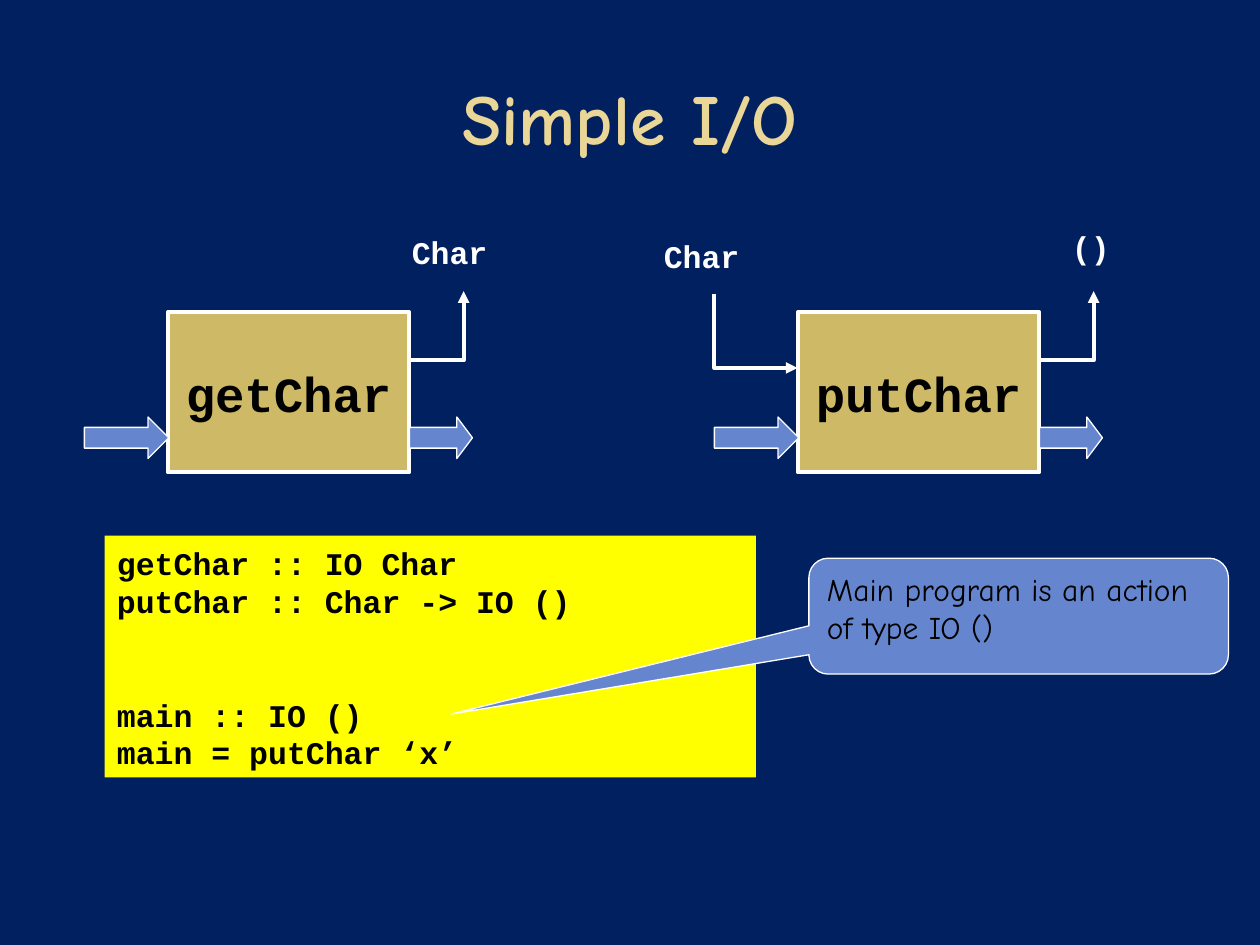
from lxml import etree
from pptx import Presentation
from pptx.dml.color import RGBColor
from pptx.enum import shapes as kinds, text as modes
from pptx.oxml.ns import qn
from pptx.util import Inches, Pt

KIND = kinds.MSO_SHAPE
ALIGN = modes.PP_ALIGN
ANCHOR = modes.MSO_ANCHOR
MONO, COMIC = "Courier New", "Comic Neue"
WHITE, BLACK, BLUE = "FFFFFF", "000000", "6585CF"


def tint(code):
    return RGBColor.from_string(code)


def paint(shape, fill, line=None, width=0.75):
    shape.shadow.inherit = False
    if fill:
        shape.fill.solid()
        shape.fill.fore_color.rgb = tint(fill)
    else:
        shape.fill.background()
    if line:
        shape.line.color.rgb = tint(line)
        shape.line.width = Pt(width)
    else:
        shape.line.fill.background()


def write(para, words, face, size, color, bold=True, align=ALIGN.LEFT, before=2):
    para.text = words
    para.alignment = align
    para.line_spacing = Pt(size * 1.2)
    para.space_before = Pt(before)
    font = para.font
    font.name, font.size, font.bold = face, Pt(size), bold
    font.color.rgb = tint(color)


def block(parent, kind, at, fill, line=None, width=0.75):
    shape = parent.add_shape(kind, *map(Inches, at))
    paint(shape, fill, line, width)
    return shape


def label(parent, words, at):
    frame = parent.add_textbox(*map(Inches, at)).text_frame
    frame.word_wrap = False
    write(frame.paragraphs[0], words, MONO, 18, WHITE)


def flow(parent, left, top, width, notch):
    arrow = block(parent, KIND.RIGHT_ARROW, (left, top, width, 0.33), BLUE, WHITE)
    arrow.adjustments[1] = notch


def bend(parent, *points):
    start, *rest = [(Inches(x), Inches(y)) for x, y in points]
    pen = parent.build_freeform(*start)
    pen.add_line_segments(rest, close=False)
    path = pen.convert_to_shape()
    paint(path, None, WHITE, 2.25)
    etree.SubElement(path.line._get_or_add_ln(), qn("a:tailEnd"), type="triangle")


def action(slide, left, name, result, at):
    group = slide.shapes.add_group_shape().shapes
    right = left + 1.92
    box = block(group, KIND.RECTANGLE, (left, 2.48, 1.92, 1.27), "CEB966", WHITE, 2.25)
    frame = box.text_frame
    frame.word_wrap = False
    frame.vertical_anchor = ANCHOR.MIDDLE
    write(frame.paragraphs[0], name, MONO, 28, BLACK, align=ALIGN.CENTER, before=5.6)
    bend(group, (right, 2.86), (right + 0.43, 2.86), (right + 0.43, 2.31))
    flow(group, left - 0.66, 3.31, 0.67, 0.5)
    flow(group, right, 3.31, 0.5, 0.375)
    label(group, result, at)
    return group


def code(slide, lines, gap):
    box = block(slide.shapes, KIND.RECTANGLE, (0.83, 4.25, 5.17, 1.92), "FFFF00")
    frame = box.text_frame
    frame.word_wrap = True
    frame.vertical_anchor = ANCHOR.BOTTOM
    for i, words in enumerate(lines):
        para = frame.add_paragraph() if i else frame.paragraphs[0]
        write(para, words, MONO, 18, BLACK, before=43.2 if i == gap else 0)


def note(slide, words):
    shape = block(slide.shapes, KIND.ROUNDED_RECTANGULAR_CALLOUT,
                  (6.42, 4.43, 3.33, 0.92), BLUE, WHITE)
    for i, value in enumerate((-1.353, 0.845, 0.167)):
        shape.adjustments[i] = value
    frame = shape.text_frame
    frame.word_wrap = True
    frame.vertical_anchor = ANCHOR.TOP
    write(frame.paragraphs[0], words, COMIC, 18, BLACK, bold=False)


def head(slide, words):
    title = slide.shapes.title
    title.left, title.top, title.width, title.height = map(Inches, (0.5, 0.3, 9, 1.25))
    frame = title.text_frame
    frame.auto_size = modes.MSO_AUTO_SIZE.NONE
    frame.vertical_anchor = ANCHOR.MIDDLE
    write(frame.paragraphs[0], words, COMIC, 41, "EAD696", align=ALIGN.CENTER)


def main():
    deck = Presentation()
    deck.slide_width, deck.slide_height = Inches(10), Inches(7.5)
    slide = deck.slides.add_slide(deck.slide_layouts[5])
    back = slide.background.fill
    back.solid()
    back.fore_color.rgb = tint("002060")
    head(slide, "Simple I/O")
    action(slide, 1.33, "getChar", "Char", (3.17, 1.8, 1, 0.5))
    put = action(slide, 6.33, "putChar", "()", (8.41, 1.76, 0.5, 0.4))
    bend(put, (5.67, 2.33), (5.67, 2.92), (6.33, 2.92))
    label(put, "Char", (5.17, 1.83, 1, 0.5))
    code(slide, ["getChar :: IO Char", "putChar :: Char -> IO ()",
                 "main :: IO ()", "main = putChar ‘x’"], 2)
    note(slide, "Main program is an action of type IO ()")
    deck.save("out.pptx")


if __name__ == "__main__":
    main()
